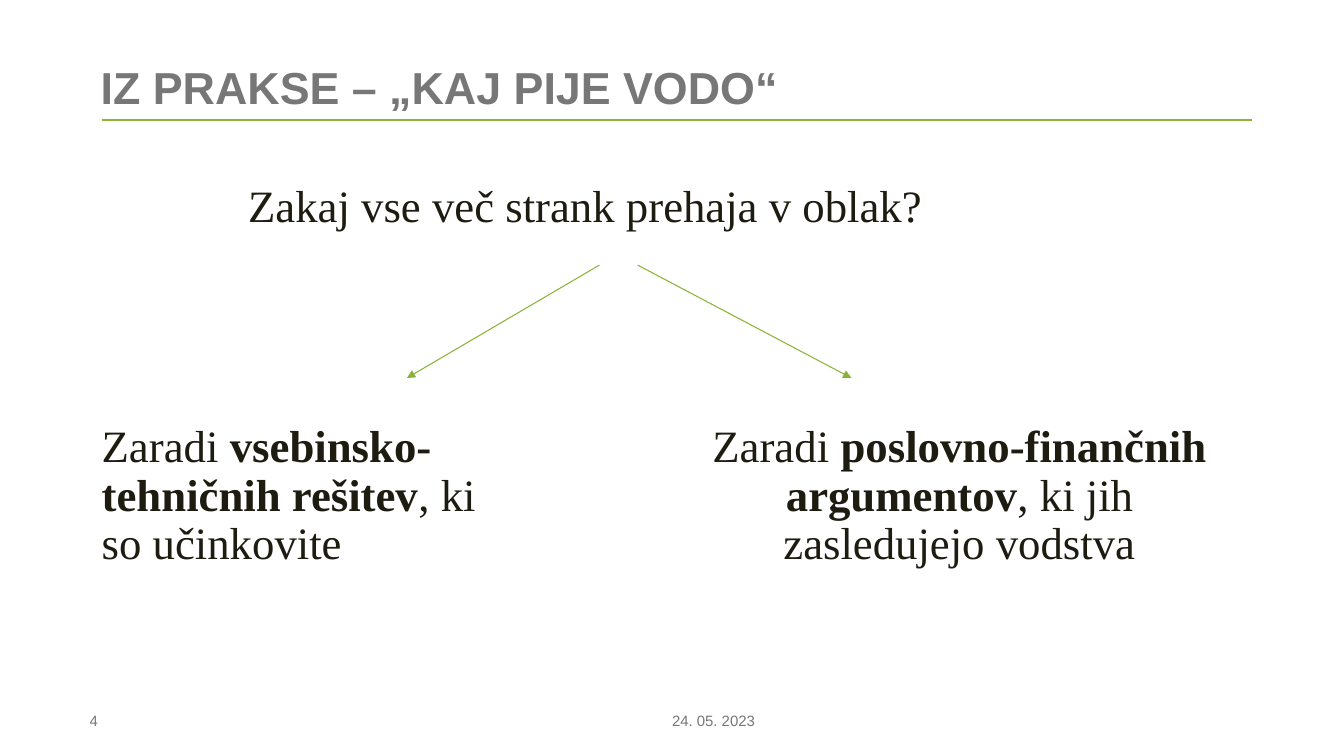
from lxml import etree
from pptx import Presentation
from pptx import util as u
from pptx.dml.color import RGBColor
from pptx.enum import shapes, text
from pptx.oxml import ns

WIDTH, HEIGHT = u.Inches(13.34), u.Inches(7.5)
COLUMN, ROW = WIDTH / 40, HEIGHT / 30
GREY = RGBColor(0x77, 0x77, 0x77)
INK = RGBColor(0x1E, 0x1C, 0x11)
RULE_GREEN = RGBColor(0x8B, 0xB4, 0x38)
ARROW_GREEN = RGBColor(0x89, 0xB3, 0x34)
LEFT, CENTER = text.PP_ALIGN.LEFT, text.PP_ALIGN.CENTER
TOP, MIDDLE = text.MSO_ANCHOR.TOP, text.MSO_ANCHOR.MIDDLE


def grid(*cells):
    return [round(cell * unit) for cell, unit in zip(cells, (COLUMN, ROW) * 2)]


def add_text(s, cells, runs, font, size, color, align=LEFT, anchor=TOP):
    tf = s.shapes.add_textbox(*grid(*cells)).text_frame
    tf.word_wrap = True
    tf.vertical_anchor = anchor
    p = tf.paragraphs[0]
    p.alignment = align
    p.font.name, p.font.size = font, u.Pt(size)
    p.font.color.rgb = color
    for words, bold in runs:
        r = p.add_run()
        r.text = words
        r.font.bold = bold
    return tf


def add_label(s, cells, words, size, bold=False, anchor=MIDDLE, top=0):
    tf = add_text(s, cells, [(words, bold)], "Arial", size, GREY, anchor=anchor)
    tf.margin_left = tf.margin_right = tf.margin_bottom = 0
    tf.margin_top = u.Inches(top)


def add_statement(s, cells, runs, align=CENTER):
    tf = add_text(s, cells, runs, "Times New Roman", 32, INK, align)
    tf.paragraphs[0].line_spacing = 0.9


def add_line(s, cells, color, width, arrow=False):
    line = s.shapes.add_connector(shapes.MSO_CONNECTOR.STRAIGHT, *grid(*cells))
    line.line.color.rgb = color
    line.line.width = u.Pt(width)
    if arrow:
        ln = line.line._get_or_add_ln()
        etree.SubElement(ln, ns.qn("a:tailEnd"), type="triangle")
    etree.SubElement(line._element.spPr, ns.qn("a:effectLst"))


def main():
    prs = Presentation()
    prs.slide_width, prs.slide_height = WIDTH, HEIGHT
    s = prs.slides.add_slide(prs.slide_layouts[6])

    add_line(s, (3.03, 4.76, 37.27, 4.76), RULE_GREEN, 1.5)
    add_label(s, (3, 2.16, 34.48, 3.4), "IZ PRAKSE – „KAJ PIJE VODO“", 32,
              bold=True, anchor=TOP, top=0.05)
    add_label(s, (20, 27.96, 9.36, 1.24), "24. 05. 2023", 10.7)
    add_label(s, (2.67, 27.96, 0.96, 1.24), "4", 10.7)

    add_statement(s, (3.21, 7.08, 28.43, 6.92),
                  [("Zakaj vse več strank prehaja v oblak?", False)])
    add_statement(s, (2.73, 16.64, 12.77, 8.52),
                  [("Zaradi ", False), ("vsebinsko-tehničnih rešitev", True),
                   (", ki so učinkovite", False)], LEFT)
    add_statement(s, (20, 16.64, 17.12, 6.24),
                  [("Zaradi ", False), ("poslovno-finančnih argumentov", True),
                   (", ki jih zasledujejo vodstva", False)])

    for start, end in ((17.84, 12.11), (18.98, 25.34)):
        add_line(s, (start, 10.52, end, 15), ARROW_GREEN, 0.75, arrow=True)

    prs.save("out.pptx")


if __name__ == "__main__":
    main()
